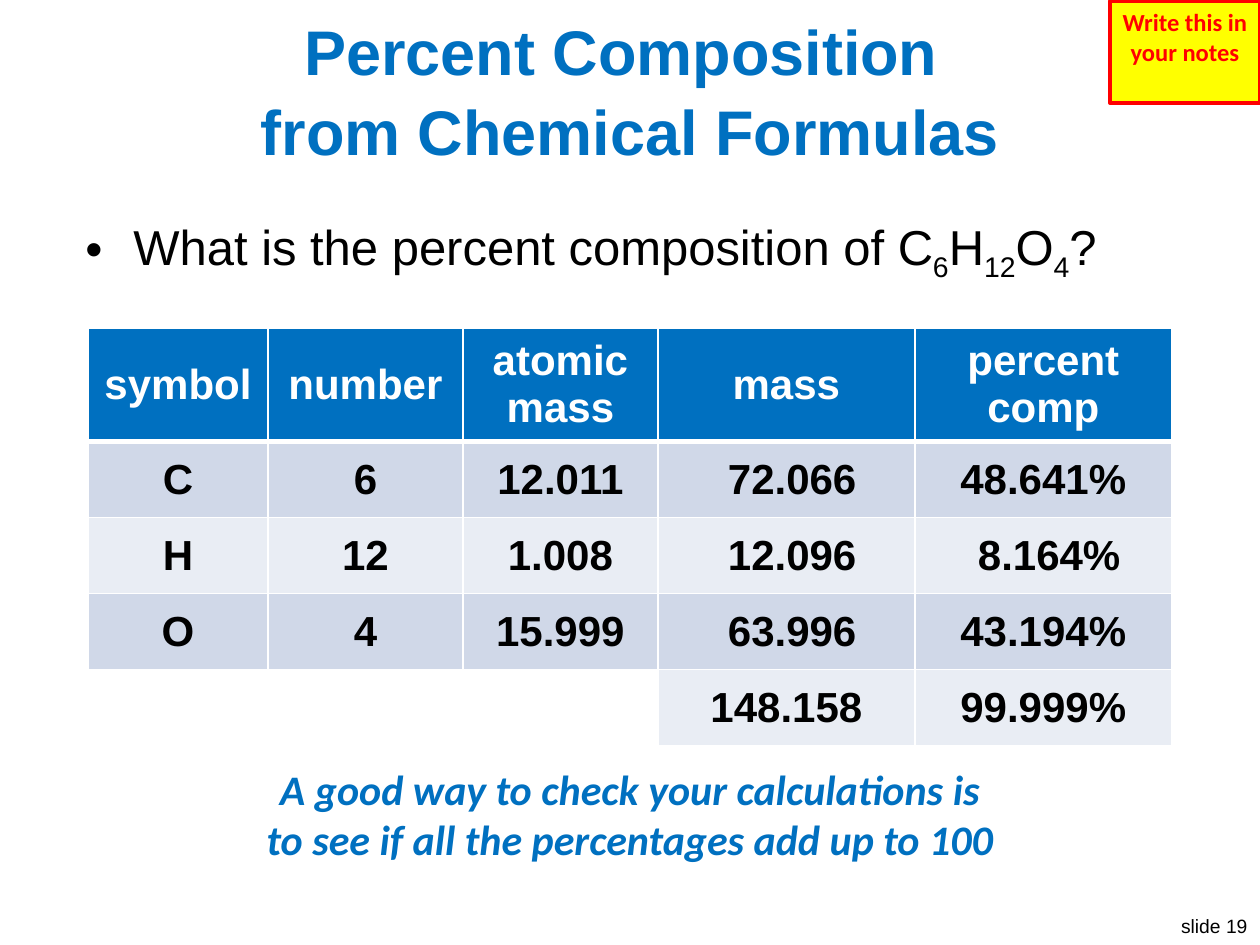
from lxml.etree import SubElement
from pptx import Presentation
from pptx.dml.color import RGBColor
from pptx.enum.shapes import MSO_SHAPE
from pptx.enum.text import MSO_ANCHOR, MSO_AUTO_SIZE, PP_ALIGN
from pptx.oxml import parse_xml
from pptx.oxml.ns import nsdecls, qn
from pptx.util import Pt

SCALE = 914400 / 126
COLORS = {
    "blue": "0070C0",
    "black": "000000",
    "white": "FFFFFF",
    "red": "FF0000",
    "yellow": "FFFF00",
    "band_dark": "D0D8E8",
    "band_light": "E9EDF4",
}
TITLE = {"name": "Arial", "size": Pt(36), "bold": True, "color": "blue"}
QUESTION = {"name": "Arial", "size": Pt(28), "color": "black"}
HEADER = {"name": "Arial", "size": Pt(24), "bold": True, "color": "white"}
BODY = {**HEADER, "color": "black"}
HINT = {"name": "Calibri", "size": Pt(24), "bold": True, "italic": True, "color": "blue"}
NOTE = {"name": "Calibri", "size": Pt(14), "bold": True, "color": "red"}
NUMBER = {"name": "Arial", "size": Pt(11), "color": "black"}

COLUMN_WIDTHS = [180, 195, 195, 257, 257]
ROW_HEIGHT = 76
ROWS = [
    ["symbol", "number", "atomic mass", "mass", "percent comp"],
    ["C", "6", "12.011", " 72.066", "48.641%"],
    ["H", "12", "1.008", " 12.096", " 8.164%"],
    ["O", "4", "15.999", " 63.996", "43.194%"],
    ["", "", "", "148.158", "99.999%"],
]
FORMULA = [("C", "6"), ("H", "12"), ("O", "4")]


def px(length):
    return round(length * SCALE)


def rgb(name):
    return RGBColor.from_string(COLORS[name])


def add_span(para, text, style):
    span = para.add_run()
    span.text = text
    for key, value in style.items():
        if key == "color":
            span.font.color.rgb = rgb(value)
        else:
            setattr(span.font, key, value)
    return span


def add_text(slide, box, text, style, align=PP_ALIGN.CENTER, **frame_format):
    shape = slide.shapes.add_textbox(*map(px, box))
    frame = shape.text_frame
    for key, value in {"word_wrap": True, **frame_format}.items():
        setattr(frame, key, value)
    para = frame.paragraphs[0]
    para.alignment = align
    for index, line in enumerate(text.split("\n")):
        if index:
            para.add_line_break()
        add_span(para, line, style)
    return para


def add_title(slide, box):
    text = "Percent Composition \nfrom Chemical Formulas"
    para = add_text(slide, box, text, TITLE, vertical_anchor=MSO_ANCHOR.MIDDLE)
    para.line_spacing = 1.05


def add_question(slide, box):
    text = "What is the percent composition of "
    para = add_text(slide, box, text, QUESTION, PP_ALIGN.LEFT)
    para.space_before = Pt(12)
    properties = para._p.get_or_add_pPr()
    properties.set("marL", str(px(48)))
    properties.set("indent", str(px(-48)))
    SubElement(properties, qn("a:buFont"), typeface="Arial")
    SubElement(properties, qn("a:buChar"), char="•")
    for symbol, count in FORMULA:
        add_span(para, symbol, QUESTION)
        subscript = add_span(para, count, QUESTION)
        subscript._r.get_or_add_rPr().set("baseline", "-25000")
    add_span(para, "?", QUESTION)


def set_borders(cell, widths):
    properties = cell._tc.get_or_add_tcPr()
    for index, (side, width) in enumerate(widths.items()):
        properties.insert(index, parse_xml(
            f'<a:ln{side} {nsdecls("a")} w="{Pt(width)}"><a:solidFill>'
            f'<a:srgbClr val="{COLORS["white"]}"/></a:solidFill></a:ln{side}>'
        ))


def fill_cell(cell, text, row):
    cell.vertical_anchor = MSO_ANCHOR.MIDDLE
    if text:
        cell.fill.solid()
        band = "band_dark" if row % 2 else "band_light"
        cell.fill.fore_color.rgb = rgb(band if row else "blue")
        para = cell.text_frame.paragraphs[0]
        para.alignment = PP_ALIGN.CENTER
        add_span(para, text, BODY if row else HEADER)
    else:
        cell.fill.background()
    top = 3 if row == 1 else 1
    bottom = 1 if row else 3
    set_borders(cell, {"L": 1, "R": 1, "T": top, "B": bottom})


def add_composition_table(slide, left, top):
    box = (left, top, sum(COLUMN_WIDTHS), ROW_HEIGHT * len(ROWS))
    frame = slide.shapes.add_table(len(ROWS), len(COLUMN_WIDTHS), *map(px, box))
    table = frame.table
    table.horz_banding = False
    for column, width in zip(table.columns, COLUMN_WIDTHS):
        column.width = px(width)
    for row, texts in enumerate(ROWS):
        table.rows[row].height = px(ROW_HEIGHT)
        for column, text in enumerate(texts):
            fill_cell(table.cell(row, column), text, row)


def add_note(slide, box):
    shape = slide.shapes.add_shape(MSO_SHAPE.RECTANGLE, *map(px, box))
    shape.shadow.inherit = False
    shape.fill.solid()
    shape.fill.fore_color.rgb = rgb("yellow")
    shape.line.color.rgb = rgb("red")
    shape.line.width = Pt(2.25)
    frame = shape.text_frame
    frame.word_wrap = True
    frame.vertical_anchor = MSO_ANCHOR.TOP
    para = frame.paragraphs[0]
    para.alignment = PP_ALIGN.CENTER
    add_span(para, "Write this in your notes", NOTE)


def add_hint(slide, box):
    text = "A good way to check your calculations is to see if all the percentages add up to 100"
    add_text(slide, box, text, HINT, auto_size=MSO_AUTO_SIZE.SHAPE_TO_FIT_TEXT)


def add_slide_number(slide, box):
    add_text(slide, box, "slide 19", NUMBER, PP_ALIGN.RIGHT, word_wrap=False)


def main():
    deck = Presentation()
    deck.slide_width, deck.slide_height = px(1260), px(945)
    slide = deck.slides.add_slide(deck.slide_layouts[6])
    add_slide_number(slide, (1165, 908, 95, 37))
    add_title(slide, (25, 38, 1210, 101))
    add_composition_table(slide, 88, 328)
    add_question(slide, (73, 210, 1115, 93))
    add_hint(slide, (252, 757, 756, 115))
    add_note(slide, (1110, 1, 150, 102))
    deck.save("out.pptx")


if __name__ == "__main__":
    main()
